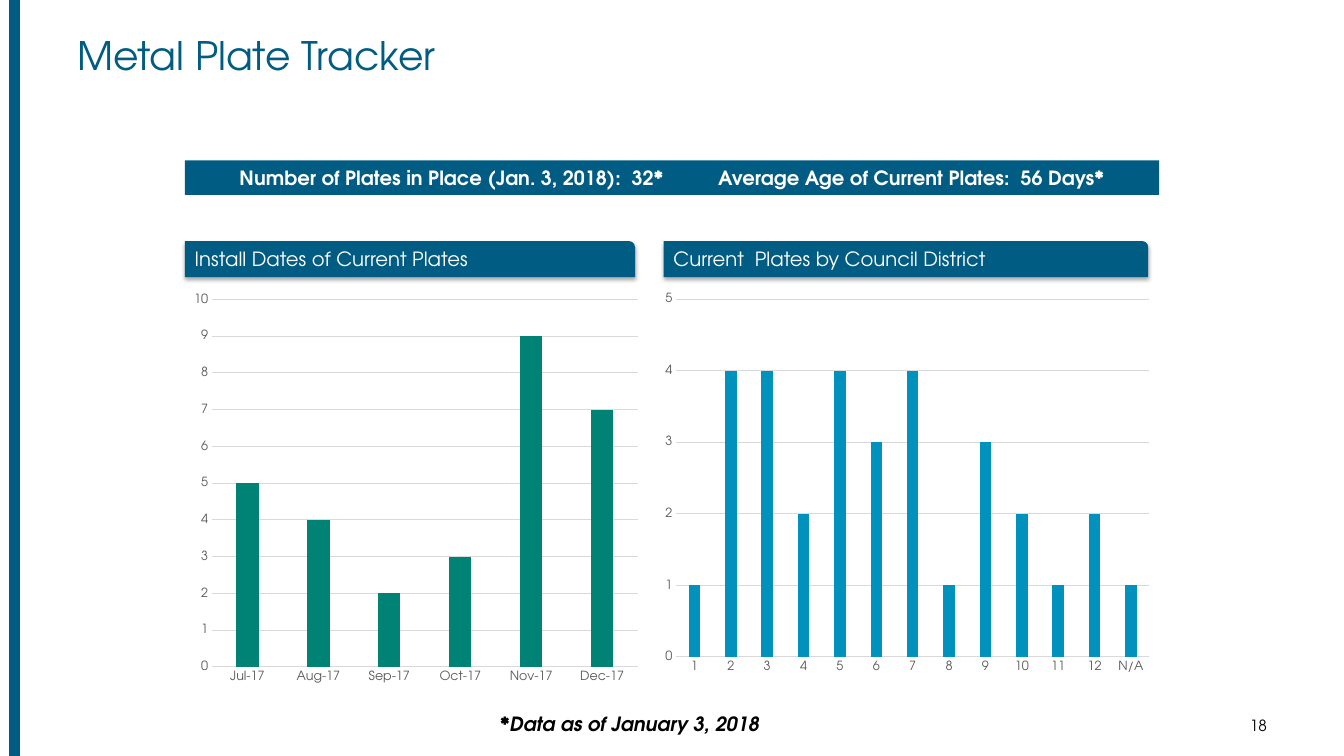
from lxml.etree import SubElement
from pptx import Presentation
from pptx.chart.data import CategoryChartData
from pptx.dml.color import RGBColor
from pptx.enum.chart import XL_CHART_TYPE, XL_TICK_MARK
from pptx.enum.shapes import MSO_CONNECTOR, MSO_SHAPE
from pptx.enum.text import MSO_ANCHOR, PP_ALIGN
from pptx.oxml import parse_xml
from pptx.oxml.ns import nsdecls, qn
from pptx.util import Inches, Pt

FONT = "TeX Gyre Adventor"
NAVY = RGBColor(0x00, 0x5C, 0x82)
GREEN = RGBColor(0x00, 0x83, 0x74)
BLUE = RGBColor(0x00, 0x92, 0xBC)
WHITE = RGBColor(0xFF, 0xFF, 0xFF)
BLACK = RGBColor(0x00, 0x00, 0x00)
GREY = RGBColor(0x59, 0x59, 0x59)
PALE = RGBColor(0xD9, 0xD9, 0xD9)

WIDE, HIGH = Inches(13.33), Inches(7.5)
COLS, ROWS = 160, 90
COL, ROW = WIDE / COLS, HIGH / ROWS


def place(left, top, width, height):
    """Turn grid columns and rows into slide lengths."""
    return int(left * COL), int(top * ROW), int(width * COL), int(height * ROW)


def style(font, size, color, bold=False, italic=False):
    """Set the look of a font."""
    font.name, font.size = FONT, Pt(size)
    font.bold, font.italic = bold, italic
    font.color.rgb = color


def write(shape, text, size, color, align=PP_ALIGN.LEFT,
          anchor=MSO_ANCHOR.TOP, bold=False, italic=False):
    """Fill a shape with one styled paragraph."""
    frame = shape.text_frame
    frame.text = text
    frame.word_wrap = True
    frame.vertical_anchor = anchor
    para = frame.paragraphs[0]
    para.alignment = align
    for run in para.runs:
        style(run.font, size, color, bold, italic)


def label(slide, box, text, size, color, **look):
    """Add a text box."""
    write(slide.shapes.add_textbox(*place(*box)), text, size, color, **look)


def bar(slide, kind, box):
    """Add a plain navy shape."""
    shape = slide.shapes.add_shape(kind, *place(*box))
    shape.shadow.inherit = False
    shape.fill.solid()
    shape.fill.fore_color.rgb = NAVY
    shape.line.fill.background()
    return shape


def stripe(slide, col):
    """Draw the upright line at the slide's left edge."""
    line = slide.shapes.add_connector(
        MSO_CONNECTOR.STRAIGHT, int(col * COL), 0, int(col * COL), HIGH)
    line.line.color.rgb = NAVY
    line.line.width = Pt(8)
    SubElement(line._element.spPr, qn("a:effectLst"))


def banner(slide, box, facts, indent, gap):
    """Show two facts in a bar, the second at a tab stop."""
    shape = bar(slide, MSO_SHAPE.RECTANGLE, box)
    para = shape.text_frame.paragraphs[0]
    tabs = SubElement(para._p.get_or_add_pPr(), qn("a:tabLst"))
    SubElement(tabs, qn("a:tab"), pos=str(int(gap * COL)), algn="l")
    shape.text_frame.margin_left = int(indent * COL)
    para.text = "\t".join(facts)
    para.alignment = PP_ALIGN.LEFT
    for run in para.runs:
        style(run.font, 14, WHITE, bold=True)


def header(slide, box, text):
    """Add a heading bar with a soft shadow."""
    shape = bar(slide, MSO_SHAPE.ROUND_1_RECTANGLE, box)
    glow = parse_xml(
        f'<a:outerShdw {nsdecls("a")} blurRad="{Pt(3.1)}" dist="{Pt(1.8)}" '
        'dir="5400000" rotWithShape="0"><a:srgbClr val="000000">'
        '<a:alpha val="35000"/></a:srgbClr></a:outerShdw>')
    shape._element.spPr.find(qn("a:effectLst")).append(glow)
    write(shape, text, 14, WHITE, anchor=MSO_ANCHOR.MIDDLE)


def columns(slide, box, counts, top, color):
    """Add a column chart of plate counts."""
    data = CategoryChartData(number_format="0")
    data.categories = list(counts)
    data.add_series("Series 1", list(counts.values()))
    chart = slide.shapes.add_chart(
        XL_CHART_TYPE.COLUMN_CLUSTERED, *place(*box), data).chart
    chart.has_legend = chart.has_title = False
    style(chart.font, 10, BLACK)
    plot = chart.plots[0]
    plot.vary_by_categories = False
    plot.gap_width, plot.overlap = 219, -27
    fill = plot.series[0].format.fill
    fill.solid()
    fill.fore_color.rgb = color
    names, scale = chart.category_axis, chart.value_axis
    for axis in (names, scale):
        axis.major_tick_mark = axis.minor_tick_mark = XL_TICK_MARK.NONE
        style(axis.tick_labels.font, 9, GREY)
    scale.minimum_scale, scale.maximum_scale = 0, top
    scale.major_unit = 1
    scale.has_major_gridlines = True
    scale.format.line.fill.background()
    for line in (names.format.line, scale.major_gridlines.format.line):
        line.color.rgb = PALE
        line.width = Pt(0.75)


def panel(slide, box, shift, span, text, counts, top, color):
    """Stack a heading bar and its chart in a box."""
    left, high, width, height = box
    drop = 5.3
    header(slide, (left + shift, high, span, 4.3), text)
    columns(slide, (left, high + drop, width, height - drop),
            counts, top, color)


def main():
    """Build the slide and save it."""
    deck = Presentation()
    deck.slide_width, deck.slide_height = WIDE, HIGH
    slide = deck.slides.add_slide(deck.slide_layouts[6])
    stripe(slide, 1.7)
    label(slide, (8, 3.1, 136, 7.9), "Metal Plate Tracker", 28, NAVY)
    banner(slide, (22, 19.1, 116, 4.1),
           ("Number of Plates in Place (Jan. 3, 2018):  32*",
            "Average Age of Current Plates:  56 Days*"), 6.5, 57)
    months = ("Jul-17", "Aug-17", "Sep-17", "Oct-17", "Nov-17", "Dec-17")
    zones = [str(n) for n in range(1, 13)] + ["N/A"]
    panel(slide, (22, 28.7, 55, 53.5), 0, 53.6,
          "Install Dates of Current Plates",
          dict(zip(months, (5, 4, 2, 3, 9, 7))), 10, GREEN)
    panel(slide, (78, 28.7, 60, 52.3), 1, 57.7,
          "Current  Plates by Council District",
          dict(zip(zones, (1, 4, 4, 2, 4, 3, 4, 1, 3, 2, 1, 2, 1))), 5, BLUE)
    label(slide, (58.3, 84.2, 33.4, 4.1), "*Data as of January 3, 2018", 14,
          BLACK, align=PP_ALIGN.CENTER, bold=True, italic=True)
    label(slide, (120.6, 85.1, 31.4, 2.5), "18", 11, BLACK,
          align=PP_ALIGN.RIGHT, anchor=MSO_ANCHOR.MIDDLE)
    deck.save("out.pptx")


if __name__ == "__main__":
    main()
